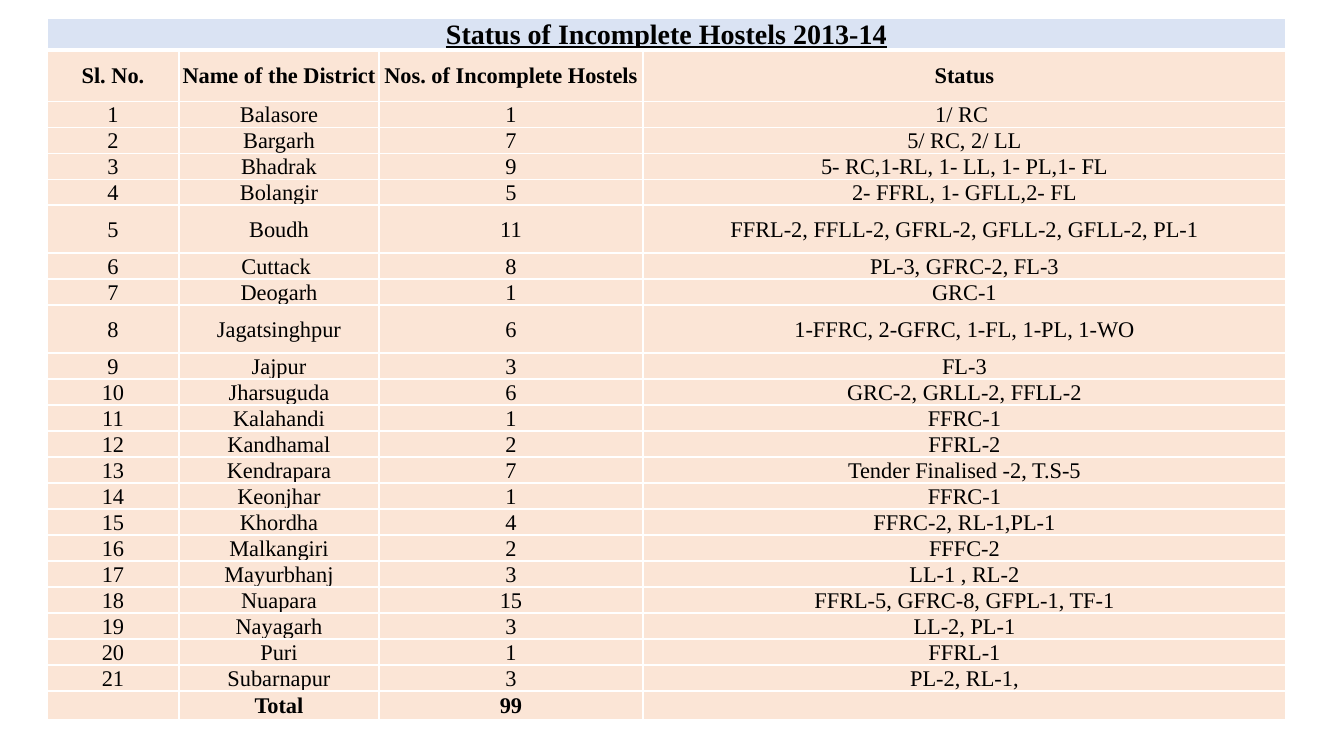
from lxml.etree import SubElement
from pptx import Presentation
from pptx.dml.color import RGBColor
from pptx.enum.text import MSO_ANCHOR, PP_ALIGN
from pptx.oxml.ns import qn
from pptx.util import Emu, Pt

COLORS = {"title": "DAE3F3", "body": "FBE5D6", "border": "FFFFFF", "text": "000000"}
FONT = "Times New Roman"
TITLE = "Status of Incomplete Hostels 2013-14"
HEADERS = ("Sl. No.", "Name of the District", "Nos. of Incomplete Hostels", "Status")
DISTRICTS = [
    ("Balasore", 1, "1/ RC "),
    ("Bargarh", 7, "5/ RC, 2/ LL"),
    ("Bhadrak", 9, "5- RC,1-RL, 1- LL, 1- PL,1- FL"),
    ("Bolangir", 5, "2- FFRL, 1- GFLL,2- FL"),
    ("Boudh", 11, "FFRL-2, FFLL-2, GFRL-2, GFLL-2, GFLL-2, PL-1"),
    ("Cuttack ", 8, "PL-3, GFRC-2, FL-3"),
    ("Deogarh", 1, "GRC-1"),
    ("Jagatsinghpur", 6, "1-FFRC, 2-GFRC, 1-FL, 1-PL, 1-WO"),
    ("Jajpur", 3, "FL-3"),
    ("Jharsuguda", 6, "GRC-2, GRLL-2, FFLL-2"),
    ("Kalahandi", 1, "FFRC-1"),
    ("Kandhamal", 2, "FFRL-2"),
    ("Kendrapara", 7, "Tender Finalised -2, T.S-5"),
    ("Keonjhar", 1, "FFRC-1"),
    ("Khordha", 4, "FFRC-2, RL-1,PL-1"),
    ("Malkangiri", 2, "FFFC-2"),
    ("Mayurbhanj", 3, "LL-1 , RL-2"),
    ("Nuapara", 15, "FFRL-5, GFRC-8, GFPL-1, TF-1"),
    ("Nayagarh", 3, "LL-2, PL-1"),
    ("Puri", 1, "FFRL-1"),
    ("Subarnapur", 3, "PL-2, RL-1,"),
]
LEFT, TOP = 47, 18
COLUMN_WIDTHS = (132, 200, 264, 643)
ROW_HEIGHT = 26
SPECIAL_HEIGHTS = {0: 28, 1: 51, 6: 48, 9: 48}  # title, header, Boudh, Jagatsinghpur


def px(length):
    return Emu(round(length * 914400 / 100.8))


def set_borders(cell, top=1, bottom=1):
    properties = cell._tc.get_or_add_tcPr()
    for side, width in (("L", 1), ("R", 1), ("T", top), ("B", bottom)):
        line = SubElement(properties, qn(f"a:ln{side}"), w=str(Pt(width)))
        fill = SubElement(line, qn("a:solidFill"))
        SubElement(fill, qn("a:srgbClr"), val=COLORS["border"])


def fill_cell(cell, text, color, size=16, bold=False, underline=False):
    cell.fill.solid()
    cell.fill.fore_color.rgb = RGBColor.from_string(color)
    cell.vertical_anchor = MSO_ANCHOR.MIDDLE
    cell.margin_left = cell.margin_right = cell.margin_top = px(1)
    cell.margin_bottom = 0
    cell.text_frame.text = text
    paragraph = cell.text_frame.paragraphs[0]
    paragraph.alignment = PP_ALIGN.CENTER
    for run in paragraph.runs:
        font = run.font
        font.name, font.size = FONT, Pt(size)
        font.bold, font.underline = bold, underline
        font.color.rgb = RGBColor.from_string(COLORS["text"])
    # An empty cell keeps the row height of its text size
    if not text:
        SubElement(paragraph._p, qn("a:endParaRPr"), sz=str(size * 100))


def add_hostel_table(slide, rows):
    heights = [SPECIAL_HEIGHTS.get(index, ROW_HEIGHT) for index in range(len(rows))]
    frame = slide.shapes.add_table(len(rows), len(COLUMN_WIDTHS), px(LEFT), px(TOP),
                                   px(sum(COLUMN_WIDTHS)), px(sum(heights)))
    table = frame.table
    table.first_row = table.horz_banding = False
    for column, width in zip(table.columns, COLUMN_WIDTHS):
        column.width = px(width)
    for row, height in zip(table.rows, heights):
        row.height = px(height)

    # Title row across all columns
    for cell in table.rows[0].cells:
        set_borders(cell, bottom=3)
        fill_cell(cell, "", COLORS["title"])
    table.cell(0, 0).merge(table.cell(0, len(COLUMN_WIDTHS) - 1))
    fill_cell(table.cell(0, 0), TITLE, COLORS["title"], size=20, bold=True, underline=True)

    # Header, district and total rows
    for index, values in enumerate(rows[1:], start=1):
        for cell, value in zip(table.rows[index].cells, values):
            set_borders(cell, top=3 if index == 1 else 1)
            fill_cell(cell, str(value), COLORS["body"], bold=index in (1, len(rows) - 1))


def main():
    presentation = Presentation()
    presentation.slide_width, presentation.slide_height = px(1344), px(756)
    slide = presentation.slides.add_slide(presentation.slide_layouts[6])
    total = sum(count for _, count, _ in DISTRICTS)
    numbered = [(number, *district) for number, district in enumerate(DISTRICTS, start=1)]
    add_hostel_table(slide, [(TITLE,), HEADERS, *numbered, ("", "Total", total, "")])
    presentation.save("out.pptx")


if __name__ == "__main__":
    main()
